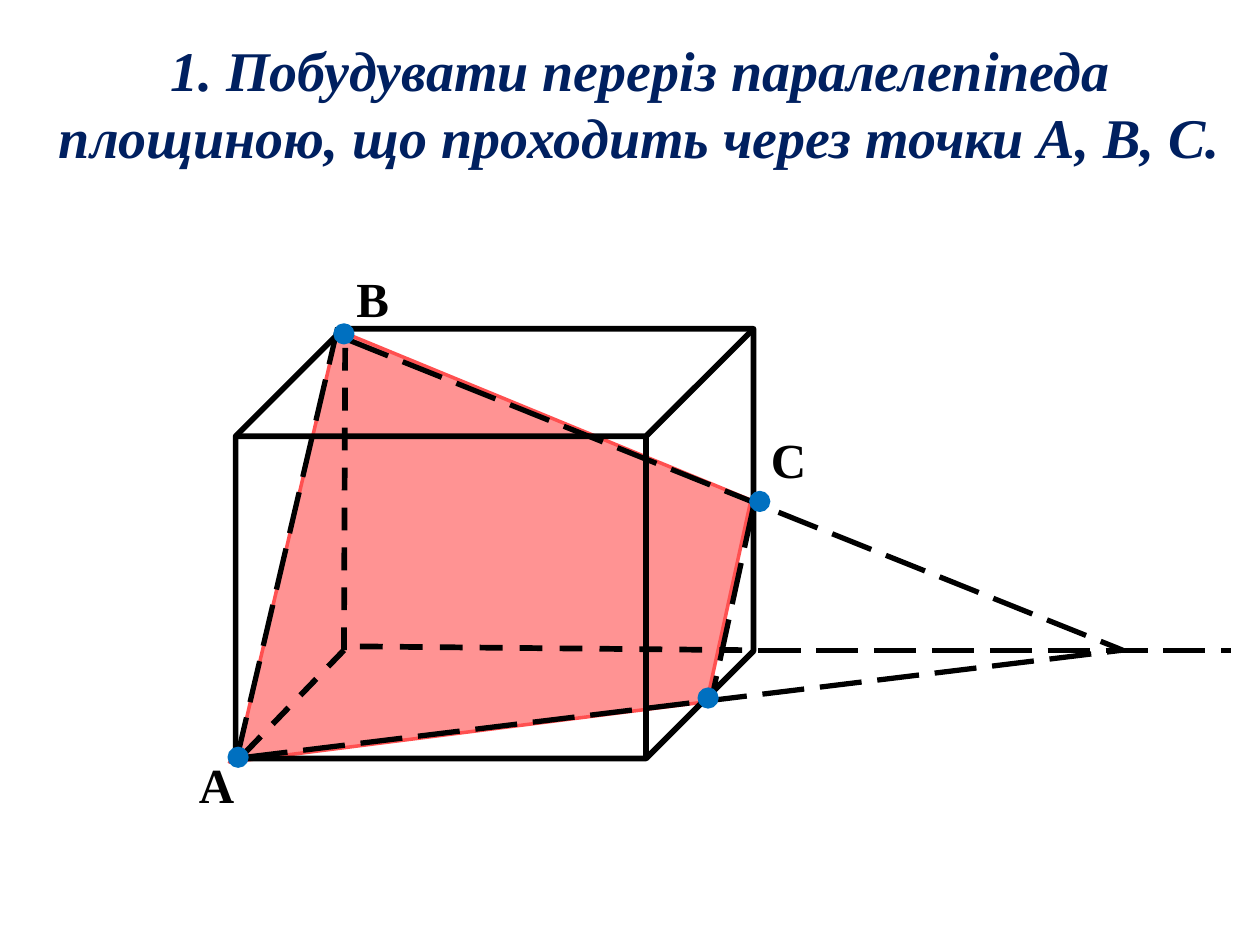
from dataclasses import dataclass

from lxml.etree import SubElement
from pptx import Presentation
from pptx.dml.color import RGBColor
from pptx.enum.dml import MSO_LINE as Dash
from pptx.enum.shapes import MSO_CONNECTOR as Link, MSO_SHAPE as Kind
from pptx.enum.text import MSO_ANCHOR as Anchor, MSO_AUTO_SIZE as Fit, PP_ALIGN as Align
from pptx.oxml.ns import qn
from pptx.util import Inches, Pt


@dataclass(frozen=True)
class Theme:
    """Colours, type and line sizes."""
    font: str = "Times New Roman"
    navy: RGBColor = RGBColor(0x00, 0x20, 0x60)
    ink: RGBColor = RGBColor(0, 0, 0)
    dot: RGBColor = RGBColor(0x00, 0x70, 0xC0)
    cut: RGBColor = RGBColor(0xFF, 0x50, 0x50)
    head: int = 32
    label: int = 28
    edge: float = 3.25
    trace: float = 3
    rim: float = 2


THEME = Theme()
LABELS = [("А", 0.48, 3.94), ("С", 5.02, 1.36), ("В", 1.73, 0.08)]
DOTS = [(1.73, 0.65), (0.89, 4.01), (4.62, 3.54), (5.03, 1.98)]
SECTION = [(0.88, 4.03), (1.68, 0.62), (4.96, 1.97), (4.61, 3.57), (0.82, 4.05)]
HIDDEN = [
    ((4.89, 3.16), (1.81, 3.13)),
    ((1.73, 3.16), (0.92, 4)),
    ((1.73, 3.16), (1.74, 0.66)),
]
TRACES = [
    ((0.88, 4.02), (1.68, 0.6)),
    ((0.95, 4.01), (7.91, 3.16)),
    ((5.02, 3.16), (8.77, 3.16)),
    ((1.77, 0.7), (7.91, 3.16)),
    ((4.98, 2.02), (4.66, 3.49)),
]


def style(para, size, color, slant=False):
    """Set the font of a paragraph."""
    font = para.font
    font.name, font.size, font.bold, font.italic = THEME.font, Pt(size), True, slant
    font.color.rgb = color


def outline(shape, color, width):
    """Set the line of a shape and drop its shadow."""
    shape.shadow.inherit = False
    shape.line.color.rgb = color
    shape.line.width = Pt(width)


def paint(shape, color):
    """Fill a shape and rim it in the same colour."""
    shape.fill.solid()
    shape.fill.fore_color.rgb = color
    outline(shape, color, THEME.rim)


def add_title(slide, box, text):
    """Place the title in its box."""
    title = slide.shapes.title
    title.left, title.top, title.width, title.height = map(Inches, box)
    frame = title.text_frame
    frame.text = text
    frame.word_wrap, frame.auto_size = True, Fit.NONE
    frame.vertical_anchor = Anchor.TOP
    para = frame.paragraphs[0]
    para.alignment = Align.CENTER
    style(para, THEME.head, THEME.navy, True)


def add_figure(slide, left, top):
    """Draw the solid and its section from the given corner."""
    shapes = slide.shapes

    def at(x, y):
        """Turn a point of the figure into slide lengths."""
        return Inches(left + x), Inches(top + y)

    def dashes(pairs, width, dash):
        """Draw dashed lines between pairs of points."""
        for start, end in pairs:
            line = shapes.add_connector(Link.STRAIGHT, *at(*start), *at(*end))
            line.line.color.rgb = THEME.ink
            line.line.width = Pt(width)
            line.line.dash_style = dash
            SubElement(line._element.spPr, qn("a:effectLst"))

    pen = shapes.build_freeform(*at(*SECTION[0]))
    pen.add_line_segments([at(*point) for point in SECTION[1:]])
    cut = pen.convert_to_shape()
    paint(cut, THEME.cut)
    tint = cut._element.spPr.find(qn("a:solidFill"))[0]
    SubElement(tint, qn("a:alpha"), val="61000")

    dashes(TRACES, THEME.trace, Dash.LONG_DASH)
    dashes(HIDDEN, THEME.edge, Dash.DASH)

    cube = shapes.add_shape(Kind.CUBE, *at(0.87, 0.61), Inches(4.11), Inches(3.41))
    cube.fill.background()
    outline(cube, THEME.ink, THEME.edge)

    size = 0.14
    for x, y in DOTS:
        corner = at(x - size / 2, y - size / 2)
        dot = shapes.add_shape(Kind.OVAL, *corner, Inches(size), Inches(size))
        paint(dot, THEME.dot)

    for text, x, y in LABELS:
        label = shapes.add_textbox(*at(x, y), Inches(0.49), Inches(0.57))
        frame = label.text_frame
        frame.text = text
        frame.word_wrap = False
        style(frame.paragraphs[0], THEME.label, THEME.ink)


def main():
    """Build and save the slide."""
    deck = Presentation()
    deck.slide_width, deck.slide_height = Inches(10), Inches(7.5)
    slide = deck.slides.add_slide(deck.slide_layouts[5])
    add_title(
        slide,
        (0.16, 0.23, 9.84, 1.18),
        "1. Побудувати переріз паралелепіпеда площиною, що проходить через точки А, В, С.",
    )
    add_figure(slide, 1, 2)
    deck.save("out.pptx")


if __name__ == "__main__":
    main()
